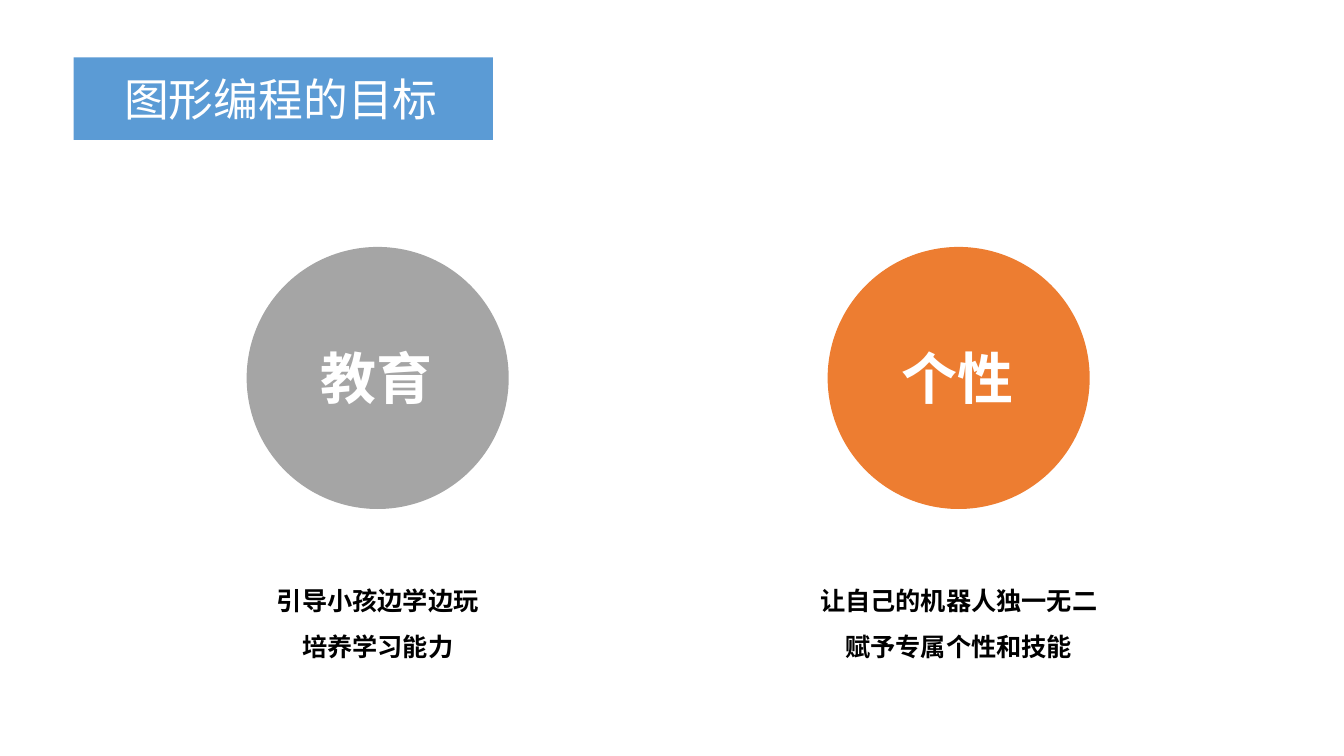
"""Build the slide on the goals of graphical programming."""
import pptx
import pptx.dml.color
import pptx.enum.shapes
import pptx.enum.text
import pptx.oxml.ns
import pptx.util
import lxml.etree
import dataclasses


@dataclasses.dataclass(frozen=True)
class Theme:
    font: str = "Noto Sans CJK SC"
    blue: str = "5B9BD5"
    gray: str = "A5A5A5"
    orange: str = "ED7D31"
    white: str = "FFFFFF"
    black: str = "000000"
    title: int = 32
    label: int = 40
    body: int = 18


class Deck:
    def __init__(self, theme):
        self.theme = theme
        self.file = pptx.Presentation()
        self.file.slide_width = pptx.util.Pt(960)
        self.file.slide_height = pptx.util.Pt(540)
        self.slide = self.file.slides.add_slide(self.file.slide_layouts[5])

    def paint(self, item, color):
        item.fill.solid()
        item.fill.fore_color.rgb = pptx.dml.color.RGBColor.from_string(color)

    def shape(self, home, kind, box, color):
        item = home.shapes.add_shape(kind, *map(pptx.util.Pt, box))
        item.shadow.inherit = False
        self.paint(item, color)
        item.line.fill.background()
        return item

    def letter(self, item, lines, size, color, bold=False,
               align=pptx.enum.text.PP_ALIGN.LEFT, space=1.0):
        frame = item.text_frame
        frame.text = "\n".join(lines)
        setup = {
            "word_wrap": True,
            "auto_size": pptx.enum.text.MSO_AUTO_SIZE.SHAPE_TO_FIT_TEXT,
            "vertical_anchor": pptx.enum.text.MSO_ANCHOR.TOP,
        }
        for name, value in setup.items():
            setattr(frame, name, value)
        style = {"name": self.theme.font, "size": pptx.util.Pt(size), "bold": bold}
        for par in frame.paragraphs:
            par.alignment = align
            par.line_spacing = space
            for run in par.runs:
                for name, value in style.items():
                    setattr(run.font, name, value)
                run.font.color.rgb = pptx.dml.color.RGBColor.from_string(color)
        for props in item.element.iter(pptx.oxml.ns.qn("a:rPr")):
            east = lxml.etree.SubElement(props, pptx.oxml.ns.qn("a:ea"))
            east.set("typeface", self.theme.font)

    def text(self, home, box, lines, size, color, **form):
        item = home.shapes.add_textbox(*map(pptx.util.Pt, box))
        self.letter(item, lines, size, color, **form)
        return item

    def title(self, words, box, band):
        item = self.slide.shapes.title
        for name, value in zip(("left", "top", "width", "height"), box):
            setattr(item, name, pptx.util.Pt(value))
        self.letter(item, [words], self.theme.title, self.theme.white)
        back = self.shape(self.slide, pptx.enum.shapes.MSO_SHAPE.RECTANGLE,
                          band, self.theme.blue)
        item.element.addprevious(back.element)

    def badge(self, mid, word, color):
        group = self.slide.shapes.add_group_shape()
        size, wide = 187.2, 95.8
        self.shape(group, pptx.enum.shapes.MSO_SHAPE.FLOWCHART_CONNECTOR,
                   (mid - size / 2, 176.4, size, size), color)
        label = self.text(group, (mid - wide / 2, 242, wide, 55.4), [word],
                          self.theme.label, self.theme.white, bold=True)
        self.paint(label, color)

    def note(self, mid, wide, lines):
        self.text(self.slide, (mid - wide / 2, 404, wide, 72.7), lines,
                  self.theme.body, self.theme.black, bold=True,
                  align=pptx.enum.text.PP_ALIGN.CENTER, space=1.5)


def main():
    theme = Theme()
    deck = Deck(theme)
    deck.title("图形编程的目标", (81.4, 47.5, 242.6, 46), (52.6, 41, 299.5, 59))
    goals = (
        (269.8, "教育", theme.gray, 160, ["引导小孩边学边玩", "培养学习能力"]),
        (684.8, "个性", theme.orange, 213, ["让自己的机器人独一无二", "赋予专属个性和技能"]),
    )
    for mid, word, color, wide, lines in goals:
        deck.badge(mid, word, color)
        deck.note(mid, wide, lines)
    deck.file.save("out.pptx")


if __name__ == "__main__":
    main()
